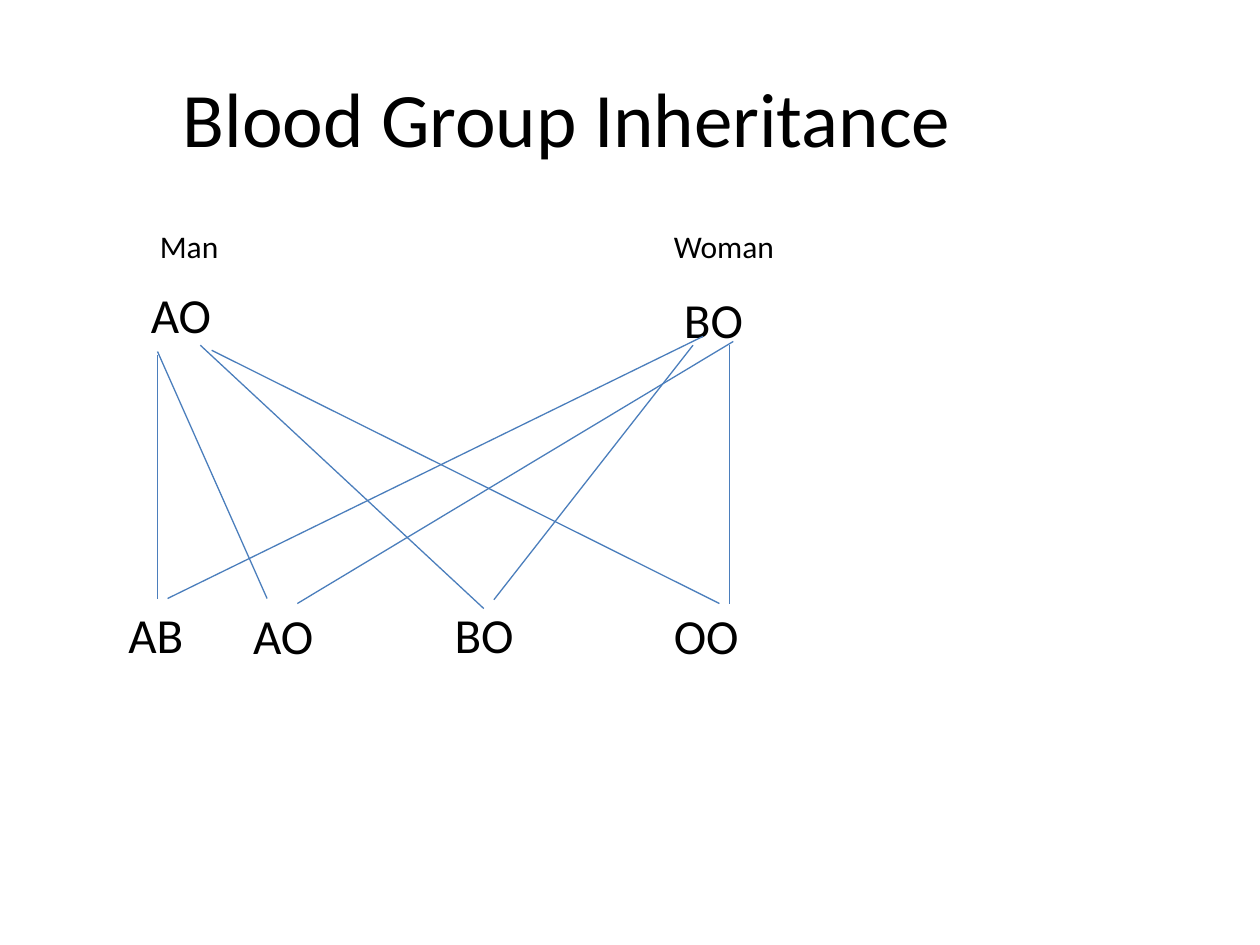
from dataclasses import dataclass

from lxml import etree
from pptx import Presentation
from pptx.dml.color import RGBColor
from pptx.enum import shapes, text
from pptx.oxml.ns import qn
from pptx.util import Inches, Pt


@dataclass(frozen=True)
class Theme:
    font: str = "Calibri"
    ink: RGBColor = RGBColor(0, 0, 0)
    line: RGBColor = RGBColor(0x4B, 0x7E, 0xBC)
    line_width: float = 0.75
    title: int = 44
    genotype: int = 28
    parent: int = 18


class SlideBuilder:
    def __init__(self, slide, theme):
        self.s = slide
        self.theme = theme

    def label(self, wording, left, top, width, height, size,
              align=text.PP_ALIGN.LEFT, anchor=text.MSO_ANCHOR.TOP):
        sp = self.s.shapes.add_textbox(
            Inches(left), Inches(top), Inches(width), Inches(height))
        tf = sp.text_frame
        tf.word_wrap = True
        tf.vertical_anchor = anchor
        tf.text = wording
        p = tf.paragraphs[0]
        p.alignment = align
        font = p.runs[0].font
        font.name = self.theme.font
        font.size = Pt(size)
        font.color.rgb = self.theme.ink

    def line(self, start, end):
        sp = self.s.shapes.add_connector(
            shapes.MSO_CONNECTOR.STRAIGHT, *map(Inches, start + end))
        sp.line.color.rgb = self.theme.line
        sp.line.width = Pt(self.theme.line_width)
        etree.SubElement(sp._element.spPr, qn("a:effectLst"))


def main():
    prs = Presentation()
    prs.slide_width, prs.slide_height = Inches(10), Inches(7.5)
    theme = Theme()
    slide = SlideBuilder(prs.slides.add_slide(prs.slide_layouts[6]), theme)

    # Title
    slide.label("Blood Group Inheritance", 0, 0.3, 9, 1.25, theme.title,
                text.PP_ALIGN.CENTER, text.MSO_ANCHOR.MIDDLE)

    # Parents
    for name, left, width in [("Man", 1.17, 1.25), ("Woman", 5.25, 1.08)]:
        slide.label(name, left, 1.75, width, 0.4, theme.parent)

    # Genotypes: parents above, children below
    genotypes = [
        ("AO", 1.1, 2.21, 1.17), ("BO", 5.33, 2.25, 1.33),
        ("AB", 0.92, 4.75, 1.17), ("AO", 1.91, 4.76, 2.15),
        ("BO", 3.51, 4.75, 2.04), ("OO", 5.25, 4.76, 1.83),
    ]
    for name, left, top, width in genotypes:
        slide.label(name, left, top, width, 0.57, theme.genotype)

    # Alleles passed on: one line from each parent to each child
    from_man = [
        ((1.25, 2.82), (1.25, 4.75)), ((1.25, 2.79), (2.12, 4.75)),
        ((1.59, 2.74), (3.84, 4.83)), ((1.68, 2.78), (5.71, 4.79)),
    ]
    from_woman = [
        ((5.58, 2.67), (1.33, 4.75)), ((5.82, 2.71), (2.36, 4.79)),
        ((5.5, 2.74), (3.92, 4.76)), ((5.79, 2.74), (5.79, 4.79)),
    ]
    for start, end in from_man + from_woman:
        slide.line(start, end)

    prs.save("out.pptx")


if __name__ == "__main__":
    main()
